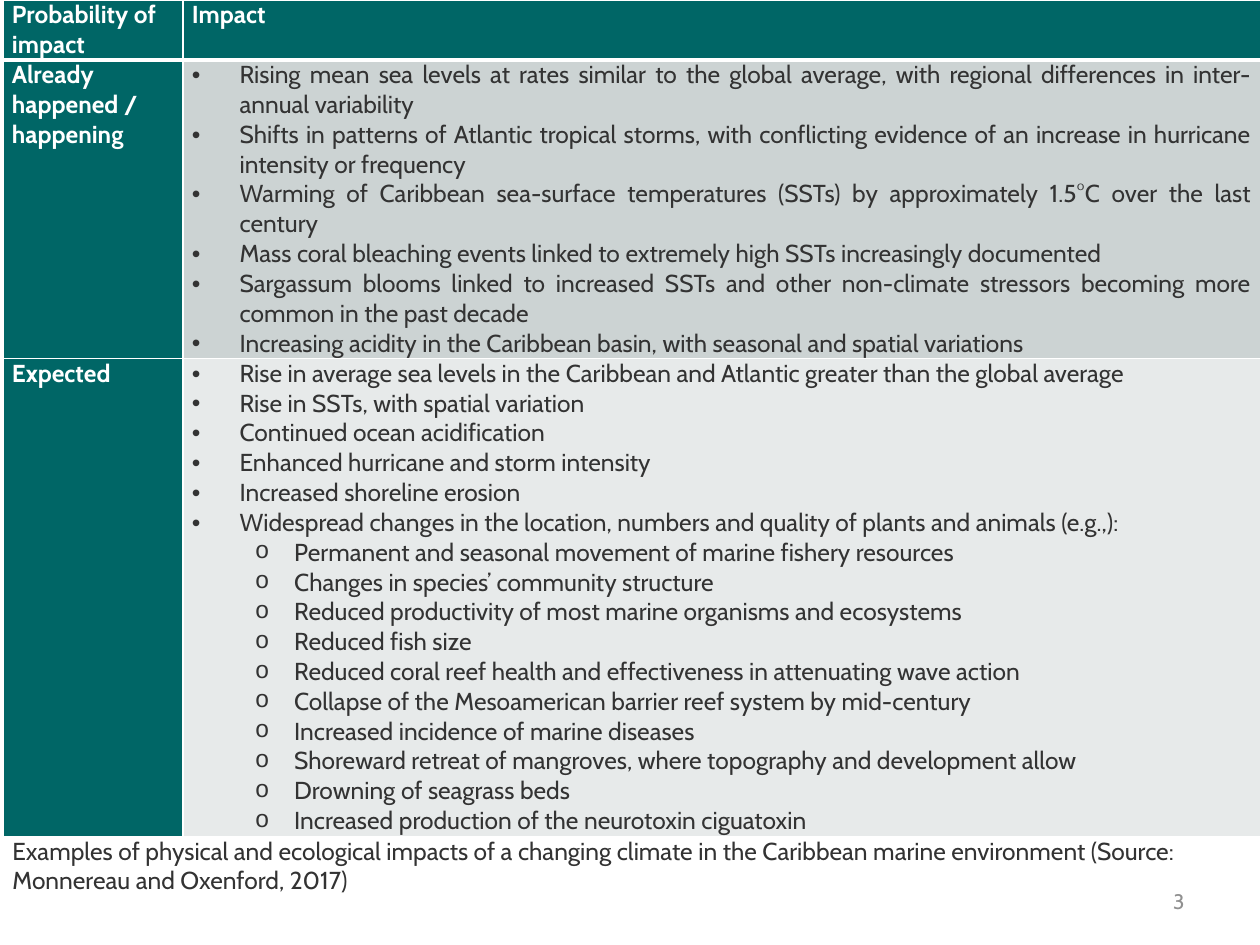
from dataclasses import dataclass

from lxml import etree
from pptx import Presentation
from pptx.dml.color import RGBColor
from pptx.enum import text
from pptx.oxml import ns
from pptx.util import Cm, Pt

COLORS = {
    "teal": "006666",
    "white": "FFFFFF",
    "ink": "333333",
    "number": "909090",
    "happening": "CCD3D3",
    "expected": "E7EAEA",
}
FONT = "Cabin"


@dataclass(frozen=True)
class Bullet:
    char: str
    font: str
    level: int
    margin: float
    hanging: float


@dataclass(frozen=True)
class ImpactRow:
    label: str
    fill: str
    height: float
    impacts: tuple[str, ...]
    examples: tuple[str, ...] = ()


DOT = Bullet("•", "Arial", 0, 0.96, 0.96)
RING = Bullet("o", "Courier New", 1, 2.06, 0.79)

COLUMN_WIDTHS = (3.63, 21.72)
# Row heights hold all lines of 14 pt text: 2, 10 and 16 of them
HEADER_HEIGHT = 1.21
ROWS = (
    ImpactRow("Already happened / happening", "happening", 6.02, (
        "Rising mean sea levels at rates similar to the global average, "
        "with regional differences in inter-annual variability",
        "Shifts in patterns of Atlantic tropical storms, with conflicting "
        "evidence of an increase in hurricane intensity or frequency",
        "Warming of Caribbean sea-surface temperatures (SSTs) by "
        "approximately 1.5°C over the last century",
        "Mass coral bleaching events linked to extremely high SSTs "
        "increasingly documented",
        "Sargassum blooms linked to increased SSTs and other non-climate "
        "stressors becoming more common in the past decade",
        "Increasing acidity in the Caribbean basin, with seasonal and "
        "spatial variations",
    )),
    ImpactRow("Expected", "expected", 9.64, (
        "Rise in average sea levels in the Caribbean and Atlantic greater "
        "than the global average",
        "Rise in SSTs, with spatial variation",
        "Continued ocean acidification",
        "Enhanced hurricane and storm intensity",
        "Increased shoreline erosion",
        "Widespread changes in the location, numbers and quality of plants "
        "and animals (e.g.,):",
    ), (
        "Permanent and seasonal movement of marine fishery resources",
        "Changes in species’ community structure",
        "Reduced productivity of most marine organisms and ecosystems",
        "Reduced fish size",
        "Reduced coral reef health and effectiveness in attenuating wave action",
        "Collapse of the Mesoamerican barrier reef system by mid-century",
        "Increased incidence of marine diseases",
        "Shoreward retreat of mangroves, where topography and development allow",
        "Drowning of seagrass beds",
        "Increased production of the neurotoxin ciguatoxin",
    )),
)


def rgb(name: str) -> RGBColor:
    return RGBColor.from_string(COLORS[name])


def write(paragraph, words: str, color: str, size: int = 14, bold: bool = False) -> None:
    run = paragraph.add_run()
    run.text = words
    for name, value in {"name": FONT, "size": Pt(size), "bold": bold}.items():
        setattr(run.font, name, value)
    run.font.color.rgb = rgb(color)


def add_bullet(paragraph, bullet: Bullet) -> None:
    paragraph.level = bullet.level
    properties = paragraph._p.get_or_add_pPr()
    properties.set("marL", str(Cm(bullet.margin)))
    properties.set("indent", str(-Cm(bullet.hanging)))
    etree.SubElement(properties, ns.qn("a:buFont"), typeface=bullet.font)
    etree.SubElement(properties, ns.qn("a:buChar"), char=bullet.char)


def format_cell(cell, fill: str, bottom_width: int = 1, top_width: int = 1) -> None:
    margins = {"margin_left": 0.18, "margin_right": 0.18,
               "margin_top": 0, "margin_bottom": 0}
    for name, value in margins.items():
        setattr(cell, name, Cm(value))
    cell.fill.solid()
    cell.fill.fore_color.rgb = rgb(fill)
    widths = {"lnL": 1, "lnR": 1, "lnT": top_width, "lnB": bottom_width}
    # Borders have to stand before the fill
    for index, (side, width) in enumerate(widths.items()):
        line = etree.Element(ns.qn(f"a:{side}"), w=str(Pt(width)))
        solid = etree.SubElement(line, ns.qn("a:solidFill"))
        etree.SubElement(solid, ns.qn("a:srgbClr"), val=COLORS["white"])
        cell._tc.get_or_add_tcPr().insert(index, line)


def write_heading(cell, words: str) -> None:
    paragraph = cell.text_frame.paragraphs[0]
    paragraph.space_before = Pt(6)
    write(paragraph, words, "white", bold=True)


def write_impacts(cell, row: ImpactRow) -> None:
    frame = cell.text_frame
    items = [(words, DOT) for words in row.impacts]
    items += [(words, RING) for words in row.examples]
    for index, (words, bullet) in enumerate(items):
        paragraph = frame.add_paragraph() if index else frame.paragraphs[0]
        paragraph.alignment = text.PP_ALIGN.JUSTIFY
        paragraph.space_before = Pt(0)
        add_bullet(paragraph, bullet)
        write(paragraph, words, "ink")


def add_impact_table(slide) -> None:
    heights = (HEADER_HEIGHT, *(row.height for row in ROWS))
    table = slide.shapes.add_table(
        len(heights), len(COLUMN_WIDTHS), Cm(0.06), Cm(0),
        Cm(sum(COLUMN_WIDTHS)), Cm(sum(heights))).table
    table.horz_banding = False
    for column, width in zip(table.columns, COLUMN_WIDTHS):
        column.width = Cm(width)
    for table_row, height in zip(table.rows, heights):
        table_row.height = Cm(height)

    for column, words in enumerate(("Probability of impact", "Impact")):
        format_cell(table.cell(0, column), "teal", bottom_width=3)
        write_heading(table.cell(0, column), words)
    for index, row in enumerate(ROWS, start=1):
        label, impacts = table.cell(index, 0), table.cell(index, 1)
        top_width = 3 if index == 1 else 1
        format_cell(label, "teal", top_width=top_width)
        format_cell(impacts, row.fill, top_width=top_width)
        write_heading(label, row.label)
        write_impacts(impacts, row)


def add_text_box(slide, left: float, top: float, width: float, height: float):
    frame = slide.shapes.add_textbox(
        Cm(left), Cm(top), Cm(width), Cm(height)).text_frame
    frame.word_wrap = True
    return frame


def main() -> None:
    presentation = Presentation()
    presentation.slide_width, presentation.slide_height = Cm(25.4), Cm(19.05)
    slide = presentation.slides.add_slide(presentation.slide_layouts[6])

    number = add_text_box(slide, 18.2, 17.65, 5.93, 1.02)
    number.vertical_anchor = text.MSO_ANCHOR.MIDDLE
    number.paragraphs[0].alignment = text.PP_ALIGN.RIGHT
    write(number.paragraphs[0], "3", "number", size=12)

    add_impact_table(slide)

    caption = add_text_box(slide, 0, 16.72, 25.1, 1.45)
    caption.auto_size = text.MSO_AUTO_SIZE.SHAPE_TO_FIT_TEXT
    write(caption.paragraphs[0],
          "Examples of physical and ecological impacts of a changing climate in "
          "the Caribbean marine environment (Source: Monnereau and Oxenford, 2017)",
          "ink")
    presentation.save("out.pptx")


if __name__ == "__main__":
    main()
